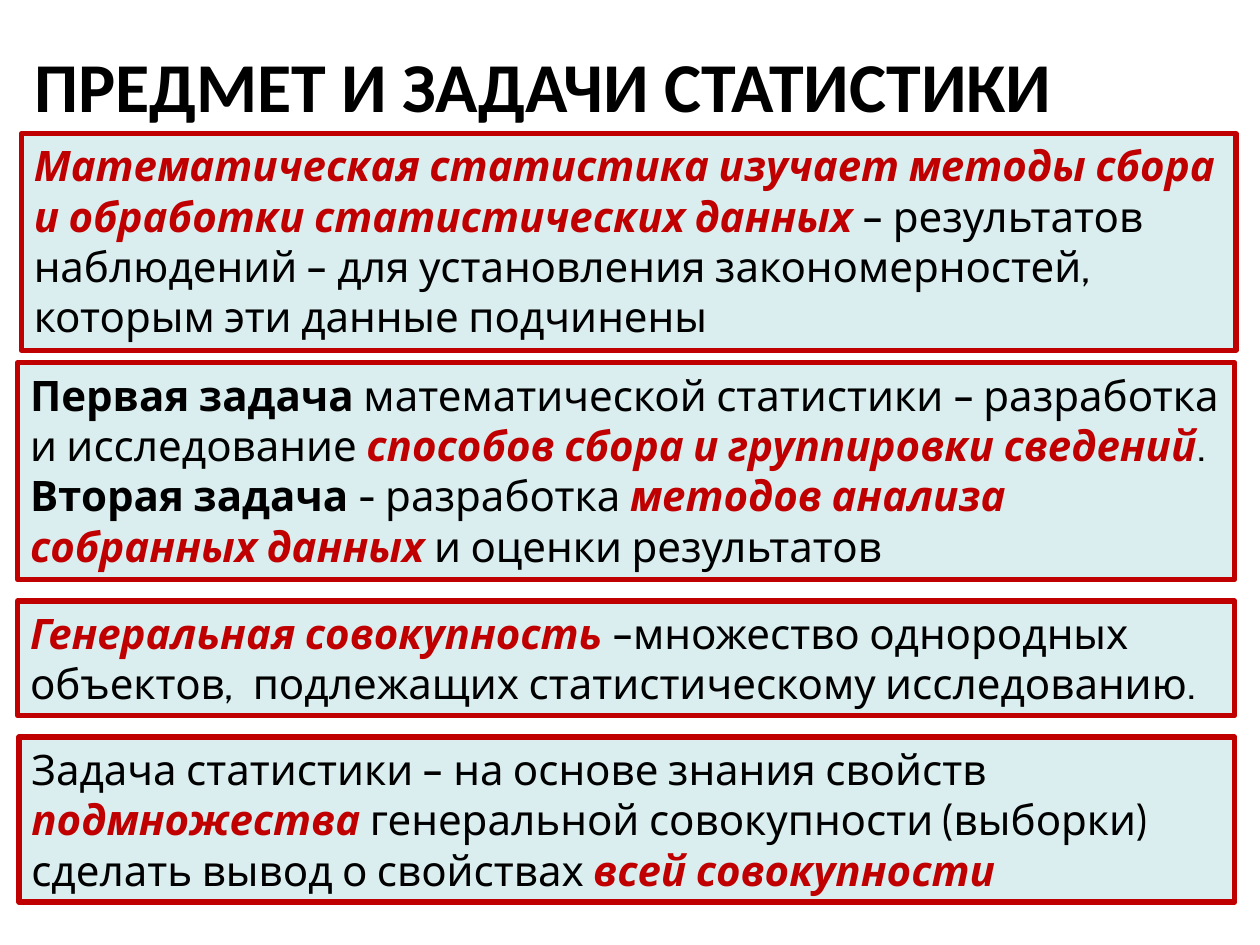
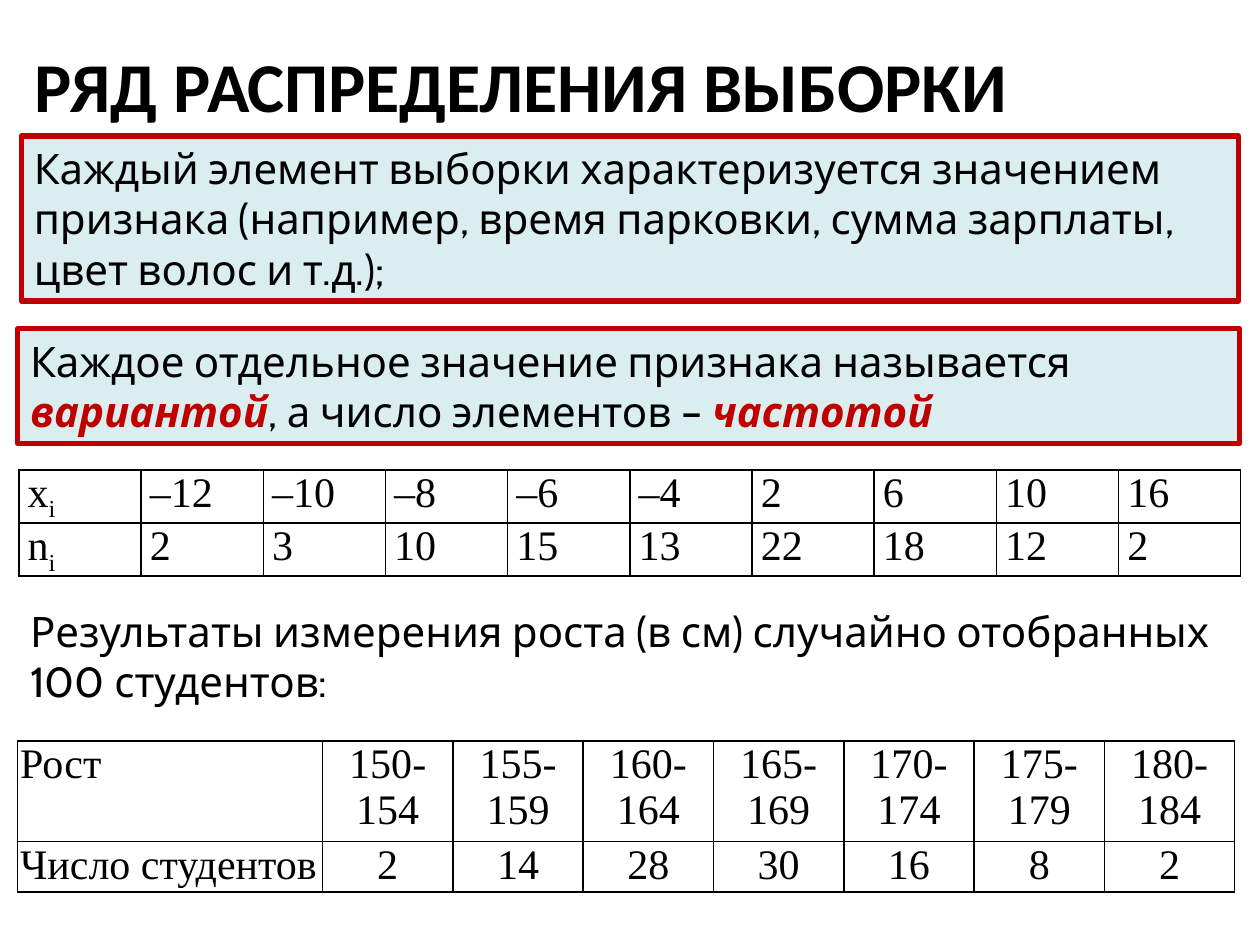
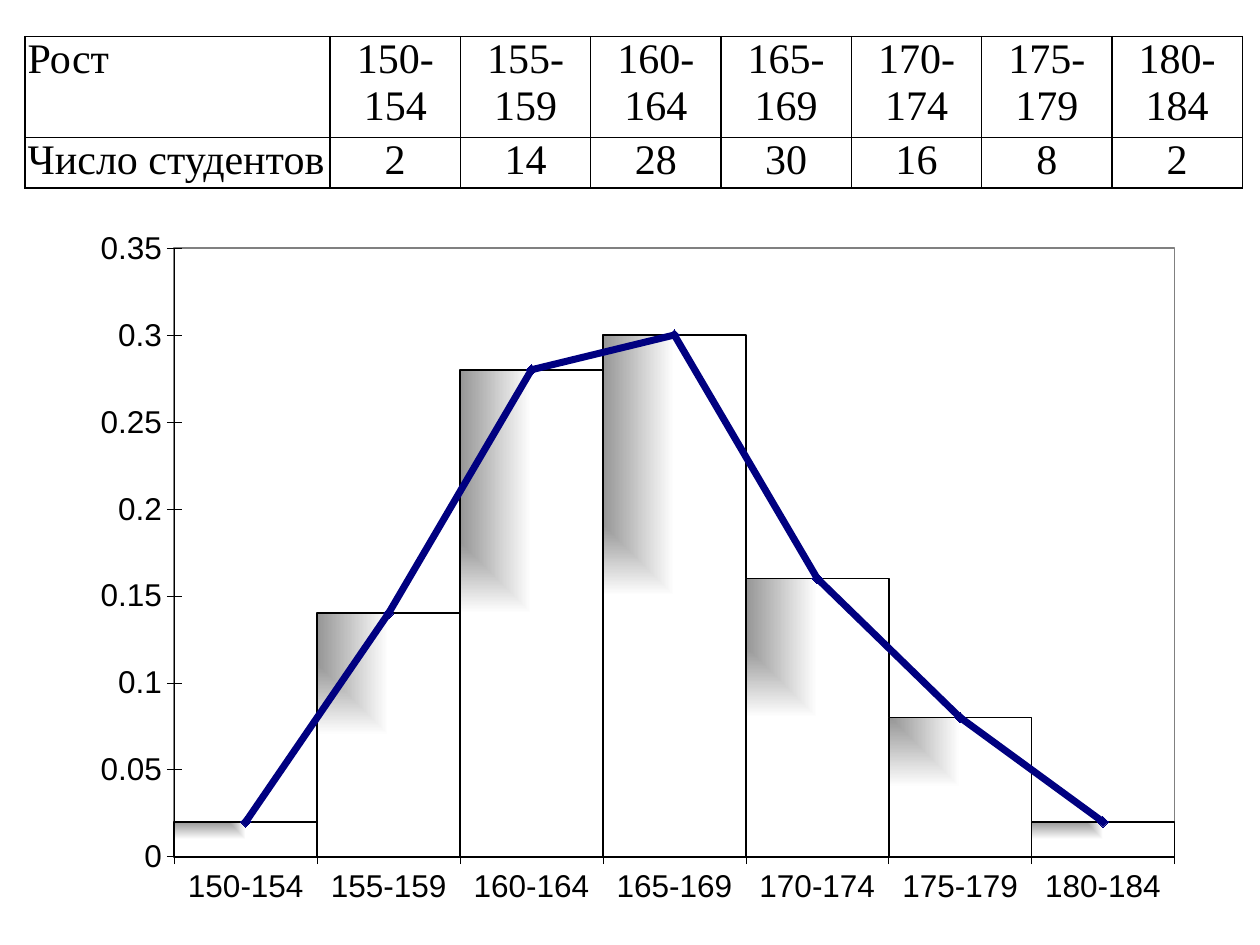
from lxml import etree
from pptx import Presentation
from pptx.chart.data import CategoryChartData
from pptx.dml.color import RGBColor
from pptx.enum.chart import XL_CHART_TYPE, XL_MARKER_STYLE, XL_TICK_MARK
from pptx.enum.shapes import MSO_SHAPE
from pptx.enum.text import MSO_ANCHOR, MSO_AUTO_SIZE, PP_ALIGN
from pptx.oxml import parse_xml
from pptx.oxml.ns import nsdecls, qn
from pptx.util import Inches, Pt

RECT = MSO_SHAPE.RECTANGLE
LEFT, MID = PP_ALIGN.LEFT, PP_ALIGN.CENTER
TOP, CORE = MSO_ANCHOR.TOP, MSO_ANCHOR.MIDDLE
FIXED = MSO_AUTO_SIZE.NONE
COLUMN = XL_CHART_TYPE.COLUMN_CLUSTERED
DIAMOND = XL_MARKER_STYLE.DIAMOND
CROSS = XL_TICK_MARK.CROSS

HEX = {"ink": "000000", "red": "C00000", "pale": "DAEDEF",
       "navy": "000080", "gray": "808080", "shade": "969696", "white": "FFFFFF"}
RGB = {name: RGBColor.from_string(code) for name, code in HEX.items()}

HEAD, BODY, GRID, AXIS = "Calibri", "Cabin", "Times New Roman", "Arial"

# Run styles: colour, bold, italic
STYLES = {"text": ("ink", False, False), "bold": ("ink", True, False),
          "key": ("red", True, True), "sub": ("ink", False, False)}


def write(frame, paras, face=BODY, size=24, align=LEFT):
    """Fill a text frame with paragraphs made of (text, style) runs."""
    frame.word_wrap = True
    for i, runs in enumerate(paras):
        para = frame.paragraphs[0] if i == 0 else frame.add_paragraph()
        para.alignment = align
        for text, style in runs:
            run = para.add_run()
            run.text = text
            font = run.font
            tint, font.bold, font.italic = STYLES[style]
            font.color.rgb = RGB[tint]
            font.name, font.size = face, Pt(size)
            if style == "sub":
                font._element.set("baseline", "-25000")


def grid(slide, left, top, wide, rows, first, highs, pad, align):
    """Add a ruled table whose columns after the first are equal."""
    count = len(rows[0])
    table = slide.shapes.add_table(len(rows), count, Inches(left), Inches(top),
                                   Inches(wide), Inches(sum(highs))).table
    table.first_row = table.horz_banding = False
    for c, col in enumerate(table.columns):
        col.width = Inches(first if c == 0 else (wide - first) / (count - 1))
    for r, row in enumerate(rows):
        table.rows[r].height = Inches(highs[r])
        for c, runs in enumerate(row):
            cell = table.cell(r, c)
            cell.margin_left = cell.margin_right = Inches(pad)
            cell.margin_top = cell.margin_bottom = 0
            if isinstance(runs, str):
                runs = [(runs, "text")]
            write(cell.text_frame, [runs], GRID, 24, align if c else LEFT)
            for side in "LRTB":
                cell._tc.get_or_add_tcPr().append(parse_xml(
                    f'<a:ln{side} {nsdecls("a")} w="12700"><a:solidFill>'
                    f'<a:srgbClr val="{HEX["ink"]}"/></a:solidFill></a:ln{side}>'))
            cell.fill.background()


# Shared data
spans = [f"{low}-{low + 4}" for low in range(150, 181, 5)]
counts = [2, 14, 28, 30, 16, 8, 2]
heights = [["Рост"] + spans, ["Число студентов"] + [str(n) for n in counts]]

sample = [
    [[("x", "text"), ("i", "sub")], "–12", "–10", "–8", "–6", "–4", "2", "6", "10", "16"],
    [[("n", "text"), ("i", "sub")], "2", "3", "10", "15", "13", "22", "18", "12", "2"],
]

# Titles with their framed boxes: left, top, width, height, paragraphs
pages = [
    ("ПРЕДМЕТ И ЗАДАЧИ СТАТИСТИКИ", [
        (0.17, 1.06, 9.64, 1.72, [[
            ("Математическая статистика изучает методы сбора и обработки "
             "статистических данных ", "key"),
            ("– результатов наблюдений – для установления закономерностей, "
             "которым эти данные подчинены", "text")]]),
        (0.14, 2.88, 9.66, 1.72, [
            [("Первая задача", "bold"),
             (" математической статистики – разработка и исследование ", "text"),
             ("способов сбора и группировки сведений", "key"), (".", "text")],
            [("Вторая задача ", "bold"), ("- разработка ", "text"),
             ("методов анализа собранных данных", "key"),
             (" и оценки результатов", "text")]]),
        (0.14, 4.77, 9.66, 0.91, [[
            ("Генеральная совокупность ", "key"),
            ("–множество однородных объектов,  подлежащих статистическому "
             "исследованию.", "text")]]),
        (0.15, 5.85, 9.65, 1.31, [[
            ("Задача статистики – на основе знания свойств ", "text"),
            ("подмножества ", "key"),
            ("генеральной совокупности (выборки) сделать вывод о свойствах ", "text"),
            ("всей совокупности", "key")]]),
    ]),
    ("РЯД РАСПРЕДЕЛЕНИЯ ВЫБОРКИ", [
        (0.17, 1.08, 9.66, 1.31, [[
            ("Каждый элемент выборки характеризуется значением признака "
             "(например, время парковки, сумма зарплаты, цвет волос и т.д.);", "text")]]),
        (0.14, 2.61, 9.7, 0.91, [[
            ("Каждое отдельное значение признака называется ", "text"),
            ("вариантой", "key"), (", а число элементов – ", "text"),
            ("частотой", "key")]]),
    ]),
]

deck = Presentation()
deck.slide_width, deck.slide_height = Inches(10), Inches(7.5)

# Slides 1 and 2: title and framed boxes
for title, boxes in pages:
    slide = deck.slides.add_slide(deck.slide_layouts[5])
    head = slide.shapes.title
    head.left, head.top = Inches(0.17), Inches(0.29)
    head.width, head.height = Inches(9.64), Inches(0.77)
    head.text_frame.auto_size = FIXED
    head.text_frame.vertical_anchor = TOP
    write(head.text_frame, [[(title, "bold")]], HEAD, 40)
    for *place, paras in boxes:
        box = slide.shapes.add_shape(RECT, *map(Inches, place))
        box.shadow.inherit = False
        box.fill.solid()
        box.fill.fore_color.rgb = RGB["pale"]
        box.line.color.rgb = RGB["red"]
        box.line.width = Pt(3)
        box.text_frame.vertical_anchor = TOP
        write(box.text_frame, paras)

# Slide 2: sample table, note and height table
grid(slide, 0.15, 3.73, 9.7, sample, 0.97, [0.4, 0.4], 0.07, LEFT)
note = slide.shapes.add_textbox(Inches(0.14), Inches(4.75), Inches(9.63), Inches(0.91))
note.text_frame.vertical_anchor = CORE
write(note.text_frame, [[("Результаты измерения роста (в см) случайно отобранных "
                          "100 студентов:", "text")]])
grid(slide, 0.14, 5.88, 9.66, heights, 2.42, [0.8, 0.4], 0.02, MID)

# Slide 3: height table over histogram and polygon
slide = deck.slides.add_slide(deck.slide_layouts[6])
data = CategoryChartData()
data.categories = spans
for name in ("Series 1", "Series 2"):
    data.add_series(name, [n / 100 for n in counts])
chart = slide.shapes.add_chart(COLUMN, Inches(0.59), Inches(1.62),
                               Inches(8.82), Inches(5.82), data).chart
chart.has_legend = chart.has_title = False
chart.font.name, chart.font.size = AXIS, Pt(18)
chart.font.color.rgb = RGB["ink"]

for axis in (chart.category_axis, chart.value_axis):
    axis.has_major_gridlines = False
    axis.major_tick_mark = CROSS
    axis.tick_labels.font.name = AXIS
    axis.tick_labels.font.size = Pt(18)
    axis.tick_labels.font.color.rgb = RGB["ink"]
    axis.format.line.color.rgb = RGB["ink"]
    axis.format.line.width = Pt(0.25)
scale = chart.value_axis
scale.minimum_scale, scale.maximum_scale, scale.major_unit = 0, 0.35, 0.05

bars = chart.plots[0]
bars.gap_width = 0
bars.vary_by_categories = False

# Second series becomes a line on hidden second axes
area = chart.element.find(".//" + qn("c:plotArea"))
line = parse_xml(
    f'<c:lineChart {nsdecls("c")}><c:grouping val="standard"/><c:varyColors val="0"/>'
    '<c:marker val="1"/><c:axId val="501"/><c:axId val="502"/></c:lineChart>')
trend = area.findall(".//" + qn("c:ser"))[1]
for flag in trend.findall(qn("c:invertIfNegative")):
    trend.remove(flag)
line.insert(2, trend)
area.find(qn("c:barChart")).addnext(line)
last = area.findall(qn("c:valAx"))[-1]
for kind, own, other, spot, limits, cross in (
        ("catAx", 501, 502, "b", "", "autoZero"),
        ("valAx", 502, 501, "r", '<c:max val="0.35"/><c:min val="0"/>', "max")):
    extra = parse_xml(
        f'<c:{kind} {nsdecls("c")}><c:axId val="{own}"/><c:scaling>'
        f'<c:orientation val="minMax"/>{limits}</c:scaling><c:delete val="1"/>'
        f'<c:axPos val="{spot}"/><c:crossAx val="{other}"/>'
        f'<c:crosses val="{cross}"/></c:{kind}>')
    last.addnext(extra)
    last = extra

# Plot area: place, fill and frame
for old in area.findall(qn("c:layout")):
    area.remove(old)
layout = parse_xml(
    f'<c:layout {nsdecls("c")}><c:manualLayout><c:layoutTarget val="inner"/>'
    '<c:xMode val="edge"/><c:yMode val="edge"/></c:manualLayout></c:layout>')
for tag, part in (("x", 0.09), ("y", 0.06), ("w", 0.9), ("h", 0.83)):
    etree.SubElement(layout[0], qn("c:" + tag)).set("val", str(part))
area.insert(0, layout)
last.addnext(parse_xml(
    f'<c:spPr {nsdecls("c", "a")}><a:solidFill><a:srgbClr val="{HEX["white"]}"/>'
    f'</a:solidFill><a:ln w="12700"><a:solidFill><a:srgbClr val="{HEX["gray"]}"/>'
    '</a:solidFill></a:ln></c:spPr>'))

# Bars shaded from the corner
bar = chart.plots[0].series[0]
bar.invert_if_negative = False
bar.format.line.color.rgb = RGB["ink"]
bar.format.line.width = Pt(1)
bar._element.find(qn("c:spPr")).insert(0, parse_xml(
    f'<a:gradFill {nsdecls("a")} rotWithShape="0"><a:gsLst>'
    f'<a:gs pos="0"><a:srgbClr val="{HEX["shade"]}"/></a:gs>'
    f'<a:gs pos="100000"><a:srgbClr val="{HEX["white"]}"/></a:gs></a:gsLst>'
    '<a:path path="rect"><a:fillToRect r="100000" b="100000"/></a:path></a:gradFill>'))

# Polygon line
curve = chart.plots[1].series[0]
curve.smooth = False
curve.format.line.color.rgb = RGB["navy"]
curve.format.line.width = Pt(4)
mark = curve.marker
mark.style, mark.size = DIAMOND, 6
mark.format.fill.solid()
mark.format.fill.fore_color.rgb = RGB["navy"]
mark.format.line.color.rgb = RGB["navy"]

grid(slide, 0.2, 0.29, 9.66, heights, 2.42, [0.8, 0.4], 0.02, MID)

deck.save("out.pptx")
